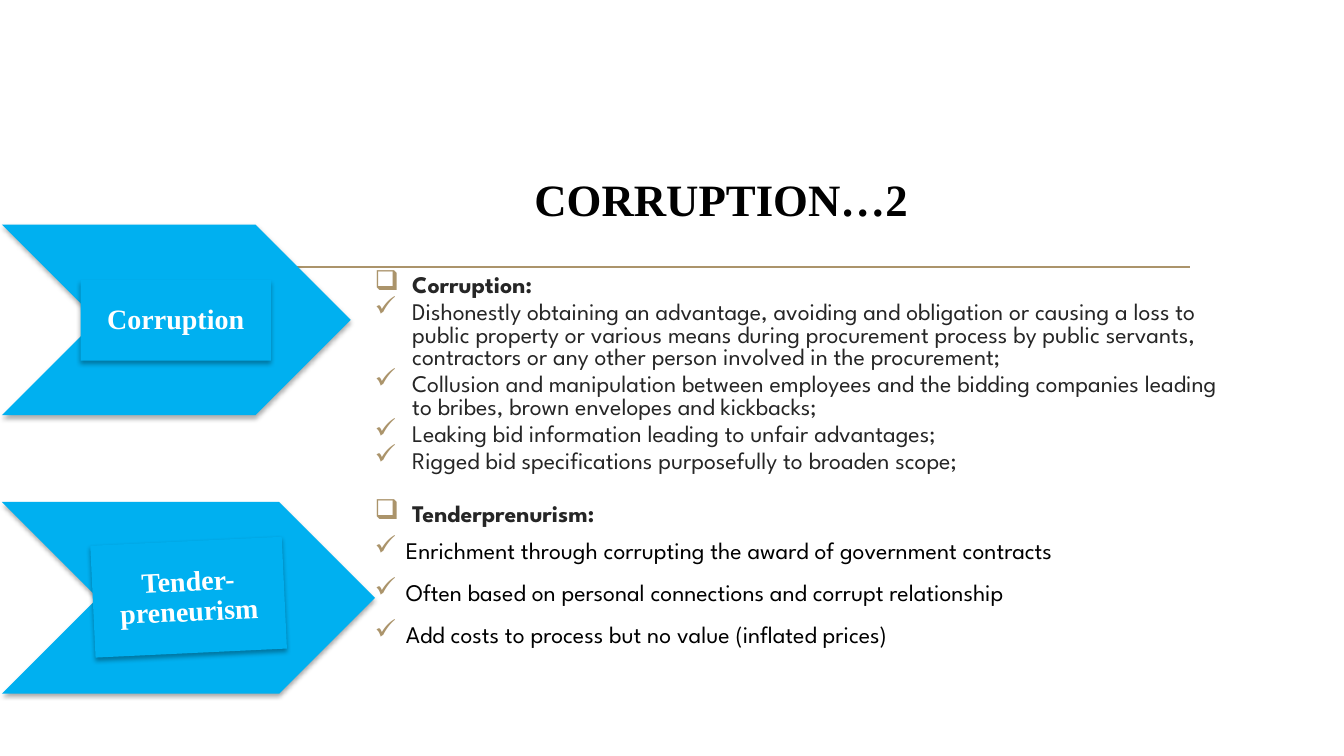
from lxml import etree
from pptx import Presentation
from pptx.dml.color import RGBColor
from pptx.enum.shapes import MSO_CONNECTOR, MSO_SHAPE
from pptx.enum.text import MSO_ANCHOR, PP_ALIGN
from pptx.oxml.ns import qn
from pptx.util import Cm, Pt

STRAIGHT = MSO_CONNECTOR.STRAIGHT
CHEVRON, RECTANGLE = MSO_SHAPE.CHEVRON, MSO_SHAPE.RECTANGLE
MIDDLE = MSO_ANCHOR.MIDDLE
LEFT, CENTER, JUSTIFY = PP_ALIGN.LEFT, PP_ALIGN.CENTER, PP_ALIGN.JUSTIFY

SERIF, SANS = "Times New Roman", "League Spartan"
BLACK, WHITE, GRAY, TAN, BLUE = "000000", "FFFFFF", "262626", "AB946B", "00B0F0"
BOX, CHECK = "❑", "✓"


def color(hex_string):
    return RGBColor.from_string(hex_string)


def add_text(paragraph, text, size, font, ink, bold=False, align=LEFT,
             line=1.0, before=0, after=0, bullet=None, indent=0):
    """Fill one paragraph; indent is the hanging indent in centimetres."""
    properties = paragraph._p.get_or_add_pPr()
    if bullet:
        properties.set("marL", str(Cm(indent)))
        properties.set("indent", str(-Cm(indent)))
        bullet_color = etree.SubElement(properties, qn("a:buClr"))
        etree.SubElement(bullet_color, qn("a:srgbClr"), val=TAN)
        etree.SubElement(properties, qn("a:buSzPct"), val="115000")
        etree.SubElement(properties, qn("a:buChar"), char=bullet)
    paragraph.alignment = align
    paragraph.line_spacing = line
    paragraph.space_before = Pt(before)
    paragraph.space_after = Pt(after)
    run = paragraph.add_run()
    run.text = text
    run.font.size = Pt(size)
    run.font.name = font
    run.font.bold = bold
    run.font.color.rgb = color(ink)


presentation = Presentation()
presentation.slide_width, presentation.slide_height = Cm(33.87), Cm(19.05)
slide = presentation.slides.add_slide(presentation.slide_layouts[6])

# Rule under the title
rule = slide.shapes.add_connector(STRAIGHT, Cm(3.89), Cm(6.73), Cm(30), Cm(6.73))
rule.line.color.rgb = color(TAN)
rule.line.width = Pt(1.25)
etree.SubElement(rule._element.spPr, qn("a:effectLst"))

# Title
title = slide.shapes.add_textbox(Cm(5.79), Cm(3.99), Cm(24.77), Cm(2.01))
title.text_frame.word_wrap = True
title.text_frame.vertical_anchor = MIDDLE
add_text(title.text_frame.paragraphs[0], "CORRUPTION…2", 32, SERIF, BLACK,
         bold=True, align=CENTER)

# Definitions
heading = dict(ink=GRAY, bold=True, line=0.8, after=2.8, bullet=BOX, indent=0.95)
point = dict(heading, bold=False, bullet=CHECK)
spaced_point = dict(ink=BLACK, align=JUSTIFY, before=3.4, after=6,
                    bullet=CHECK, indent=0.79)
definitions = [
    ("Corruption:", heading),
    ("Dishonestly obtaining an advantage, avoiding and obligation or causing a "
     "loss to public property or various means during procurement process by "
     "public servants, contractors or any other person involved in the "
     "procurement;", point),
    ("Collusion and manipulation between employees and the bidding companies "
     "leading to bribes, brown envelopes and kickbacks;", point),
    ("Leaking bid information leading to unfair advantages;", point),
    ("Rigged bid specifications purposefully to broaden scope;", point),
    ("Tenderprenurism:", dict(heading, before=19)),
    ("Enrichment through corrupting the award of government contracts", spaced_point),
    ("Often based on personal connections and corrupt relationship", spaced_point),
    ("Add costs to process but no value (inflated prices)", spaced_point),
]
body = slide.shapes.add_textbox(Cm(9.19), Cm(6.81), Cm(21.92), Cm(10.67))
body.text_frame.word_wrap = True
for index, (text, style) in enumerate(definitions):
    frame = body.text_frame
    paragraph = frame.add_paragraph() if index else frame.paragraphs[0]
    add_text(paragraph, text, 17, SANS, **style)

# Chevrons with their labels: chevron box, label box, label rotation
markers = [
    ("Corruption", (0.05, 5.66, 8.79, 4.8), (2.03, 7.06, 4.8, 2.03), 0),
    ("Tender-preneurism", (0.05, 12.65, 9.4, 4.83), (2.34, 13.64, 4.83, 2.82), 357.3),
]
for text, chevron_box, label_box, rotation in markers:
    group = slide.shapes.add_group_shape()
    for kind, box in ((CHEVRON, chevron_box), (RECTANGLE, label_box)):
        shape = group.shapes.add_shape(kind, *map(Cm, box))
        shape.fill.solid()
        shape.fill.fore_color.rgb = color(BLUE)
        shape.line.fill.background()
        shape.shadow.inherit = False
        effects = shape._element.spPr.find(qn("a:effectLst"))
        shadow = etree.SubElement(effects, qn("a:outerShdw"), blurRad=str(Pt(3.5)),
                                  dist=str(Pt(2.2)), dir="5400000", rotWithShape="0")
        shadow_color = etree.SubElement(shadow, qn("a:srgbClr"), val=BLACK)
        etree.SubElement(shadow_color, qn("a:alpha"), val="32000")
    label = shape
    label.rotation = rotation
    frame = label.text_frame
    frame.word_wrap = True
    frame.vertical_anchor = MIDDLE
    frame.margin_left = frame.margin_right = Cm(0.03)
    frame.margin_top = frame.margin_bottom = Cm(0.03)
    add_text(frame.paragraphs[0], text, 20, SERIF, WHITE, bold=True,
             align=CENTER, line=0.9, after=8.4)

presentation.save("out.pptx")
